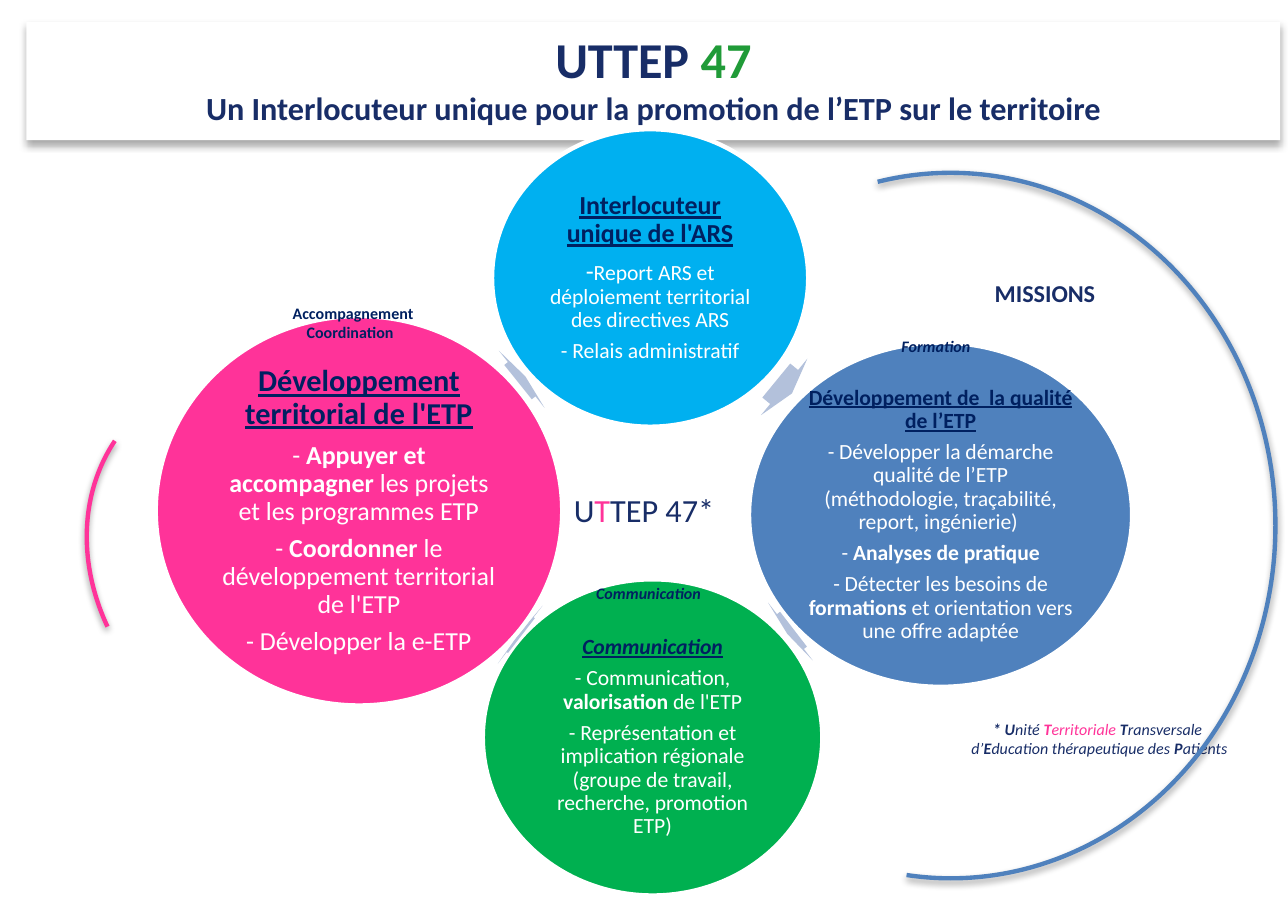
import pptx
import pptx.dml.color
import pptx.enum.shapes
import pptx.enum.text
import pptx.oxml
import pptx.util
from dataclasses import dataclass

Inches = pptx.util.Inches
Pt = pptx.util.Pt
Shapes = pptx.enum.shapes.MSO_SHAPE
Align = pptx.enum.text.PP_ALIGN
Anchor = pptx.enum.text.MSO_ANCHOR


@dataclass(frozen=True)
class Theme:
    font: str = "Calibri"
    navy: str = "182D67"
    heading: str = "002060"
    white: str = "FFFFFF"
    leaf: str = "209B38"
    pink: str = "FF3399"
    sky: str = "00B0F0"
    blue: str = "4F81BD"
    green: str = "00B050"
    arrow: str = "B3C1DB"
    title: float = 23.2
    subtitle: float = 14.9
    mission: float = 11.2
    large: float = 14
    medium: float = 12
    body: float = 10
    small: float = 7.4


THEME = Theme()
BOLD = {"bold": True}


def rgb(value):
    return pptx.dml.color.RGBColor.from_string(value)


def add_text(shape, paragraphs, align=Align.CENTER, anchor=Anchor.TOP,
             inset=(0.1, 0.05), line_spacing=None, space_after=0, **base):
    """Each paragraph is a list of (text, format) runs; base is the shared format."""
    frame = shape.text_frame
    frame.word_wrap = True
    frame.vertical_anchor = anchor
    frame.margin_left = frame.margin_right = Inches(inset[0])
    frame.margin_top = frame.margin_bottom = Inches(inset[1])
    for index, runs in enumerate(paragraphs):
        paragraph = frame.paragraphs[0] if index == 0 else frame.add_paragraph()
        paragraph.alignment = align
        if line_spacing:
            paragraph.line_spacing = line_spacing
        for text, changes in runs:
            style = {**base, **changes}
            run = paragraph.add_run()
            run.text = text
            font = run.font
            font.name = THEME.font
            font.size = Pt(style["size"])
            font.color.rgb = rgb(style["color"])
            font.bold = style.get("bold", False)
            font.italic = style.get("italic", False)
            font.underline = style.get("underline", False)
        # A share below one is relative to the type size
        gap = space_after * style["size"] if space_after < 1 else space_after
        paragraph.space_after = Pt(gap)
    return frame


def add_shape(slide, kind, box, fill=None, line=None, rotation=0, adjust=()):
    shape = slide.shapes.add_shape(kind, *map(Inches, box))
    shape.shadow.inherit = False
    shape.rotation = rotation
    for index, value in enumerate(adjust):
        shape.adjustments[index] = value
    if fill:
        shape.fill.solid()
        shape.fill.fore_color.rgb = rgb(fill)
    else:
        shape.fill.background()
    if line:
        shape.line.color.rgb = rgb(line)
        shape.line.width = Pt(2)
    else:
        shape.line.fill.background()
    return shape


def add_shadow(shape, alpha, blur, distance):
    properties = shape._element.spPr
    effects = properties.find(pptx.oxml.ns.qn("a:effectLst"))
    effects.append(pptx.oxml.parse_xml(
        f'<a:outerShdw {pptx.oxml.ns.nsdecls("a")} blurRad="{Pt(blur)}" '
        f'dist="{Pt(distance)}" dir="5400000" rotWithShape="0">'
        f'<a:srgbClr val="000000"><a:alpha val="{alpha * 1000}"/></a:srgbClr>'
        '</a:outerShdw>'))


def add_label(slide, box, paragraphs, **style):
    textbox = slide.shapes.add_textbox(*map(Inches, box))
    return add_text(textbox, paragraphs, **style)


def add_banner(slide, box):
    banner = add_shape(slide, Shapes.RECTANGLE, box, THEME.white)
    add_shadow(banner, 32, 3.5, 2.2)
    subtitle = "Un Interlocuteur unique pour la promotion de l’ETP sur le territoire"
    add_text(banner, [
        [("UTTEP ", {}), ("47", {"color": THEME.leaf})],
        [(subtitle, {"size": THEME.subtitle})],
    ], inset=(0.08, 0.04), size=THEME.title, color=THEME.navy, bold=True)


def add_footnote(slide, box):
    note = add_shape(slide, Shapes.RECTANGLE, box, THEME.white)
    pink = {"color": THEME.pink}
    add_text(note, [
        [("* U", BOLD), ("nité ", {}), ("T", {**pink, **BOLD}), ("erritoriale ", pink),
         ("T", BOLD), ("ransversale ", {})],
        [("d’", {}), ("E", BOLD), ("ducation thérapeutique des ", {}),
         ("P", BOLD), ("atients", {})],
    ], size=THEME.small, color=THEME.navy, italic=True)


def add_disc(slide, box, fill, heading, heading_size, body, body_size, **heading_style):
    disc = add_shape(slide, Shapes.OVAL, box, fill, THEME.white)
    heading_run = (heading, {"size": heading_size, "color": THEME.heading,
                             "bold": True, "underline": True, **heading_style})
    add_text(disc, [[heading_run], *body], anchor=Anchor.MIDDLE, inset=(0.02, 0.02),
             line_spacing=0.9, space_after=0.35, size=body_size, color=THEME.white)


def add_arrow(slide, box, rotation):
    add_shape(slide, Shapes.RIGHT_ARROW, box, THEME.arrow,
              rotation=rotation, adjust=(0.6, 0.5))


def add_cycle(slide, box):
    left, top, width, height = box

    def place(x, y, w, h):
        return left + x, top + y, w, h

    # Top disc
    add_disc(slide, place(2.16, 0, 2.03, 1.91), THEME.sky,
             "Interlocuteur unique de l'ARS", THEME.medium, [
                 [("-", {"size": THEME.medium}),
                  ("Report ARS et déploiement territorial des directives ARS", {})],
                 [("- Relais administratif", {})]], THEME.body)
    add_arrow(slide, place(3.97, 1.42, 0.13, 0.47), 39.4)
    # Right disc
    add_disc(slide, place(3.81, 1.37, 2.46, 2.21), THEME.blue,
             "Développement de  la qualité de l’ETP", THEME.body, [
                 [("- Développer la démarche qualité de l’ETP (méthodologie, "
                   "traçabilité, report, ingénierie) ", {})],
                 [("- ", {}), ("Analyses de pratique", BOLD)],
                 [("- Détecter les besoins de ", {}), ("formations", BOLD),
                  (" et orientation vers une offre adaptée", {})]], THEME.body)
    add_arrow(slide, place(4.05, 2.99, 0.05, 0.47), 142.3)
    # Bottom disc
    add_disc(slide, place(2.1, 2.89, 2.18, 2.03), THEME.green,
             "Communication", THEME.body, [
                 [("- Communication, ", {}), ("valorisation", BOLD), (" de l'ETP", {})],
                 [("- Représentation et implication régionale (groupe de travail, "
                   "recherche, promotion ETP)", {})]], THEME.body, italic=True)
    add_arrow(slide, place(2.33, 3.01, 0.02, 0.47), 217.7)
    # Left disc
    add_disc(slide, place(0, 1.2, 2.61, 2.5), THEME.pink,
             "Développement territorial de l'ETP", THEME.large, [
                 [("- ", {}), ("Appuyer et accompagner ", BOLD),
                  ("les projets et les programmes ETP", {})],
                 [("- ", {}), ("Coordonner", BOLD),
                  (" le développement territorial de l'ETP", {})],
                 [("- Développer la e-ETP", {})]], THEME.medium)
    add_arrow(slide, place(2.32, 1.37, 0.06, 0.47), 321.3)
    # Centre
    add_label(slide, place(2.57, 2.28, 1.13, 0.51),
              [[("U", {}), ("T", {"color": THEME.pink}), ("TEP 47*", {})]],
              inset=(0.03, 0.02), line_spacing=1.07, space_after=6.6,
              size=THEME.subtitle, color=THEME.navy)


def add_arc(slide, box, color, adjust, rotation=0):
    arc = add_shape(slide, Shapes.ARC, box, line=color, rotation=rotation, adjust=adjust)
    add_shadow(arc, 38, 3.1, 1.6)


def add_captions(slide, box):
    left, top, width, height = box
    add_label(slide, (left + 2.83, top, 4.2, 0.29), [[("MISSIONS", {})]],
              size=THEME.mission, color=THEME.navy, bold=True)
    tag = {"align": Align.LEFT, "size": THEME.small, "color": THEME.heading, "bold": True}
    add_label(slide, (left + 3.91, top + 0.37, 0.84, 0.23), [[("Formation", {})]],
              italic=True, **tag)
    frame = add_label(slide, (left, top + 0.16, 1.19, 0.35),
                      [[("Accompagnement", {})], [("Coordination", {})]], **tag)
    frame.paragraphs[1]._p.get_or_add_pPr().set("marL", str(Inches(0.09)))
    add_label(slide, (left + 1.95, top + 1.96, 0.93, 0.23), [[("Communication", {})]],
              italic=True, **tag)


def main():
    presentation = pptx.Presentation()
    presentation.slide_width = Inches(8.27)
    presentation.slide_height = Inches(5.83)
    slide = presentation.slides.add_slide(presentation.slide_layouts[6])
    add_banner(slide, (0.17, 0.14, 8.05, 0.76))
    add_footnote(slide, (5.88, 4.57, 2.36, 0.51))
    add_cycle(slide, (1, 0.83, 6.27, 4.92))
    add_arc(slide, (4.02, 1.11, 4.17, 4.53), THEME.blue, (154.8, 58.32))
    add_arc(slide, (0.46, 2.49, 2.63, 2.27), THEME.pink, (174.88, 209.44), 228.4)
    add_captions(slide, (1.78, 1.74, 7.03, 2.19))
    presentation.save("out.pptx")


if __name__ == "__main__":
    main()
